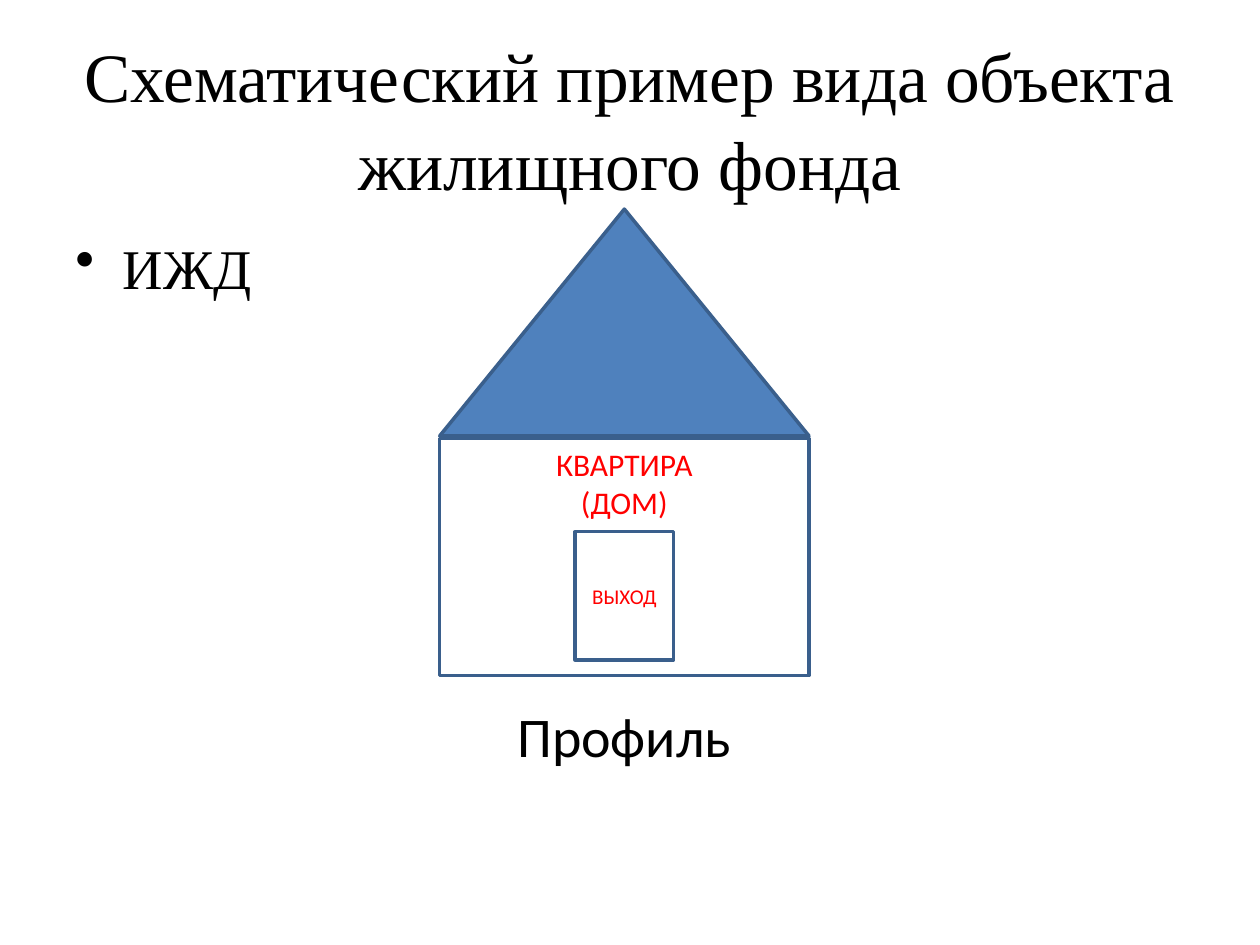
import pptx
import pptx.dml.color
import pptx.enum.shapes
import pptx.enum.text
import pptx.util
import lxml.etree

Pt = pptx.util.Pt
Shape = pptx.enum.shapes.MSO_SHAPE
Align = pptx.enum.text.PP_ALIGN
Anchor = pptx.enum.text.MSO_ANCHOR

COLORS = {"ink": "000000", "label": "FF0000", "roof": "4F81BD", "outline": "3A5F8C"}
SERIF = "Times New Roman"
SANS = "Calibri"


def color(name):
    return pptx.dml.color.RGBColor.from_string(COLORS[name])


def write(box, text, size, font=SANS, ink="ink", align=Align.CENTER,
          anchor=Anchor.TOP, spacing=None, bullet=None, indent=27):
    frame = box.text_frame
    frame.word_wrap = True
    frame.vertical_anchor = anchor
    frame.text = text
    for para in frame.paragraphs:
        para.alignment = align
        if spacing:
            para.line_spacing = spacing
        if bullet:
            properties = para._p.get_or_add_pPr()
            properties.set("marL", str(Pt(indent)))
            properties.set("indent", str(-Pt(indent)))
            mark = lxml.etree.SubElement(properties, pptx.oxml.ns.qn("a:buChar"))
            mark.set("char", bullet)
        for span in para.runs:
            span.font.name = font
            span.font.size = Pt(size)
            span.font.color.rgb = color(ink)


class SlideBuilder:
    def __init__(self, page, outline="outline", line_width=2):
        self.page = page
        self.outline = outline
        self.line_width = line_width

    def text(self, text, left, top, width, height, **style):
        box = self.page.shapes.add_textbox(Pt(left), Pt(top), Pt(width), Pt(height))
        write(box, text, **style)

    def shape(self, kind, left, top, width, height, fill=None, text=None, **style):
        box = self.page.shapes.add_shape(kind, Pt(left), Pt(top), Pt(width), Pt(height))
        box.shadow.inherit = False
        if fill:
            box.fill.solid()
            box.fill.fore_color.rgb = color(fill)
        else:
            box.fill.background()
        box.line.color.rgb = color(self.outline)
        box.line.width = Pt(self.line_width)
        if text:
            write(box, text, **style)


def main():
    deck = pptx.Presentation()
    deck.slide_width, deck.slide_height = Pt(720), Pt(540)
    builder = SlideBuilder(deck.slides.add_slide(deck.slide_layouts[6]))

    builder.text("Схематический пример вида объекта жилищного фонда",
                 36, 21.6, 648, 90, size=39.6, font=SERIF,
                 anchor=Anchor.MIDDLE, spacing=1.06)
    builder.text("ИЖД", 36, 129.6, 200, 46, size=32, font=SERIF,
                 align=Align.LEFT, bullet="•")

    house_left, house_width = 251.3, 211
    center = house_left + house_width / 2
    door_width, caption_width = 56.2, 180
    builder.text("Профиль", center - caption_width / 2, 397.4, caption_width, 46, size=32)
    builder.shape(Shape.RECTANGLE, house_left, 250.6, house_width, 135.4,
                  text="КВАРТИРА\n(ДОМ)", size=18, ink="label")
    builder.shape(Shape.ISOSCELES_TRIANGLE, house_left, 119.5, house_width, 129.6, fill="roof")
    builder.shape(Shape.RECTANGLE, center - door_width / 2, 303.8, door_width, 73.4,
                  text="ВЫХОД", size=12, ink="label", anchor=Anchor.MIDDLE)

    deck.save("out.pptx")


if __name__ == "__main__":
    main()
